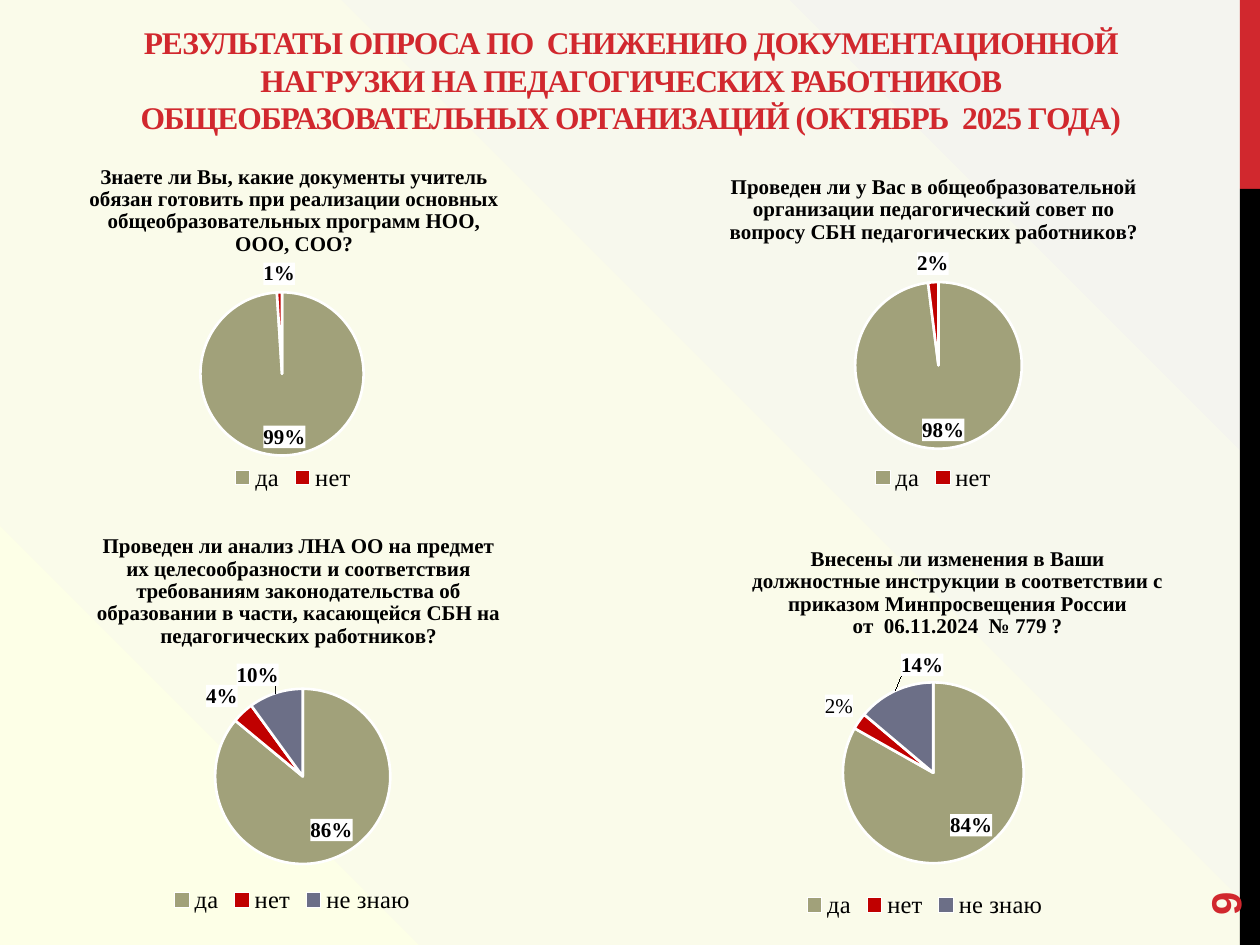
from dataclasses import dataclass

from lxml.etree import fromstring
from pptx import Presentation
from pptx.chart.data import CategoryChartData
from pptx.dml.color import RGBColor
from pptx.enum.chart import XL_CHART_TYPE, XL_LABEL_POSITION, XL_LEGEND_POSITION
from pptx.enum.shapes import MSO_SHAPE
from pptx.enum.text import MSO_ANCHOR, PP_ALIGN
from pptx.oxml.ns import nsdecls
from pptx.util import Pt


@dataclass(frozen=True)
class Theme:
    red: str = "D1282E"
    black: str = "000000"
    white: str = "FFFFFF"
    slices: tuple = ("A1A17A", "C00000", "6C6F87")
    background: tuple = ((0, "FDFFE7"), (38, "FAFBEA"), (99, "F4F4EF"))
    serif: str = "Times New Roman"
    sans: str = "Arial"
    heading: int = 18
    number: int = 24
    question: int = 12
    legend: int = 14


def set_font(font, name, size, color, bold=True):
    formats = {"name": name, "size": Pt(size), "bold": bold}
    for attribute, value in formats.items():
        setattr(font, attribute, value)
    font.color.rgb = RGBColor.from_string(color)


def set_layout(element, index, target="", mode="edge", **fractions):
    for layout in element.xpath("c:layout"):
        element.remove(layout)
    modes = "".join(f'<c:{key}Mode val="{mode}"/>' for key in "xy")
    values = "".join(f'<c:{key} val="{value}"/>' for key, value in fractions.items())
    element.insert(index, fromstring(
        f'<c:layout {nsdecls("c")}><c:manualLayout>{target}{modes}{values}'
        "</c:manualLayout></c:layout>"))


class SlideBuilder:
    def __init__(self, slide, theme):
        self.slide = slide
        self.theme = theme

    def background(self):
        fill = self.slide.background.fill
        fill.solid()
        fill.fore_color.rgb = RGBColor.from_string(self.theme.background[0][1])
        solid = self.slide.element.xpath(".//p:bgPr/a:solidFill")[0]
        stops = "".join(
            f'<a:gs pos="{position * 1000}"><a:srgbClr val="{color}"/></a:gs>'
            for position, color in self.theme.background)
        gradient = fromstring(
            f'<a:gradFill {nsdecls("a")} rotWithShape="1"><a:gsLst>{stops}</a:gsLst>'
            '<a:path path="circle"><a:fillToRect t="100000" r="100000"/></a:path>'
            "</a:gradFill>")
        solid.getparent().replace(solid, gradient)

    def bar(self, box, color):
        shape = self.slide.shapes.add_shape(MSO_SHAPE.RECTANGLE, *map(Pt, box))
        shape.shadow.inherit = False
        shape.fill.solid()
        shape.fill.fore_color.rgb = RGBColor.from_string(color)
        shape.line.fill.background()

    def text(self, box, words, font, size, anchor, alignment, margin=7.2,
             rotation=0, tracking=0):
        shape = self.slide.shapes.add_textbox(*map(Pt, box))
        shape.rotation = rotation
        frame = shape.text_frame
        formats = {"word_wrap": True, "vertical_anchor": anchor,
                   "margin_left": Pt(margin), "margin_right": Pt(margin)}
        for attribute, value in formats.items():
            setattr(frame, attribute, value)
        paragraph = frame.paragraphs[0]
        paragraph.alignment = alignment
        run = paragraph.add_run()
        run.text = words
        set_font(run.font, font, size, self.theme.red)
        run.font._element.set("spc", str(tracking))

    def pie(self, box, question, title_corner, plot, values, offsets=None,
            custom_labels=None):
        data = CategoryChartData(number_format="0%")
        data.categories = ("да", "нет", "не знаю")[:len(values)]
        data.add_series("Series 1", values)
        chart = self.slide.shapes.add_chart(
            XL_CHART_TYPE.PIE, *map(Pt, box), data).chart
        theme = self.theme
        set_font(chart.font, theme.sans, 10, theme.black, False)
        self.chart_title(chart, question, title_corner)
        chart.has_legend = True
        chart.legend.position = XL_LEGEND_POSITION.BOTTOM
        chart.legend.include_in_layout = False
        set_font(chart.legend.font, theme.serif, theme.legend, theme.black, False)
        set_layout(chart._chartSpace.xpath(".//c:plotArea")[0], 0,
                   '<c:layoutTarget val="inner"/>', **dict(zip("xywh", plot)))
        chart.plots[0].vary_by_categories = True
        series = chart.plots[0].series[0]
        for index in range(len(values)):
            self.slice(series.points[index], index, (offsets or {}).get(index),
                       (custom_labels or {}).get(index))

    def chart_title(self, chart, question, corner):
        chart.has_title = True
        frame = chart.chart_title.text_frame
        frame.text = question
        for paragraph in frame.paragraphs:
            paragraph.alignment = PP_ALIGN.CENTER
            set_font(paragraph.runs[0].font, self.theme.serif,
                     self.theme.question, self.theme.black)
        set_layout(chart.chart_title._element, 1, **dict(zip("xy", corner)))

    def slice(self, point, index, offset, custom_label):
        theme = self.theme
        point.format.fill.solid()
        point.format.fill.fore_color.rgb = RGBColor.from_string(theme.slices[index])
        point.format.line.width = Pt(1.5)
        point.format.line.color.rgb = RGBColor.from_string(theme.white)
        label = point.data_label
        if custom_label:
            label.text_frame.text = custom_label
            font = label.text_frame.paragraphs[0].runs[0].font
        else:
            font = label.font
        set_font(font, theme.serif, theme.question, theme.black, not custom_label)
        label.position = (XL_LABEL_POSITION.OUTSIDE_END if index
                          else XL_LABEL_POSITION.INSIDE_END)
        element = point._element.xpath(f"c:dLbls/c:dLbl[c:idx/@val={index}]")[0]
        element.xpath("c:txPr|c:dLblPos")[0].addprevious(fromstring(
            f'<c:spPr {nsdecls("c", "a")}><a:solidFill><a:srgbClr val="{theme.white}"/>'
            "</a:solidFill></c:spPr>"))
        if offset:
            set_layout(element, 1, mode="factor", **dict(zip("xy", offset)))


def main():
    presentation = Presentation()
    presentation.slide_width, presentation.slide_height = Pt(720), Pt(540)
    theme = Theme()
    builder = SlideBuilder(
        presentation.slides.add_slide(presentation.slide_layouts[6]), theme)
    builder.background()
    builder.bar((708.5, 0, 11.5, 108), theme.red)
    builder.bar((708.5, 108, 11.5, 432), theme.black)
    builder.text(
        (31, 10.8, 658.8, 70.6),
        "РЕЗУЛЬТАТЫ ОПРОСА ПО  СНИЖЕНИЮ ДОКУМЕНТАЦИОННОЙ НАГРУЗКИ НА "
        "ПЕДАГОГИЧЕСКИХ РАБОТНИКОВ ОБЩЕОБРАЗОВАТЕЛЬНЫХ ОРГАНИЗАЦИЙ "
        "(ОКТЯБРЬ  2025 ГОДА)",
        theme.serif, theme.heading, MSO_ANCHOR.BOTTOM, PP_ALIGN.CENTER,
        margin=20, tracking=-60)
    builder.text((648, 463.7, 103.7, 28.8), "9", theme.sans, theme.number,
                 MSO_ANCHOR.MIDDLE, PP_ALIGN.LEFT, rotation=270)
    builder.pie(
        (17.3, 302.4, 299.5, 222.5),
        "Проведен ли анализ ЛНА ОО на предмет их целесообразности и соответствия "
        "требованиям законодательства об образовании в части, касающейся СБН на "
        "педагогических работников?",
        (0.12, 0), (0.05, 0.41, 0.94, 0.45), (0.86, 0.04, 0.1),
        {0: (0.03, -0.02), 2: (0.01, 0)})
    builder.pie(
        (11.5, 89.3, 311.8, 194.4),
        "Знаете ли Вы, какие документы учитель обязан готовить при реализации "
        "основных общеобразовательных программ НОО, ООО, СОО?",
        (0.12, 0.01), (0.06, 0.4, 0.84, 0.48), (0.99, 0.01))
    builder.pie(
        (377.3, 89.3, 311.8, 194.4),
        "Проведен ли у Вас в общеобразовательной организации педагогический совет "
        "по вопросу СБН педагогических работников?",
        (0.12, 0.04), (0.06, 0.37, 0.9, 0.49), (0.98, 0.02))
    builder.pie(
        (365.8, 298.1, 325.4, 229.7),
        "Внесены ли изменения в Ваши\nдолжностные инструкции в соответствии с\n"
        "приказом Минпросвещения России\nот  06.11.2024  № 779 ?",
        (0.19, 0.05), (0.16, 0.4, 0.71, 0.45), (0.84, 0.03, 0.14),
        {0: (0.03, -0.02), 2: (0.09, -0.02)}, {1: "2%"})
    presentation.save("out.pptx")


if __name__ == "__main__":
    main()
